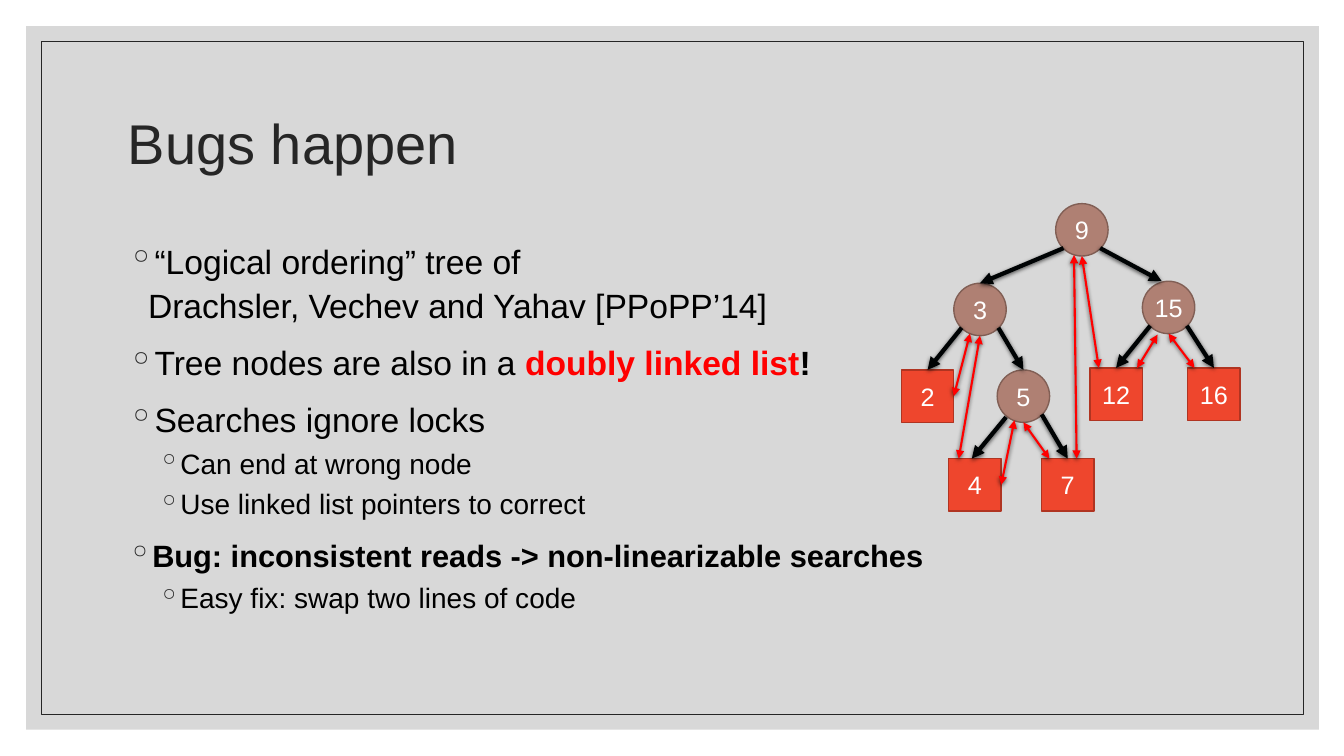
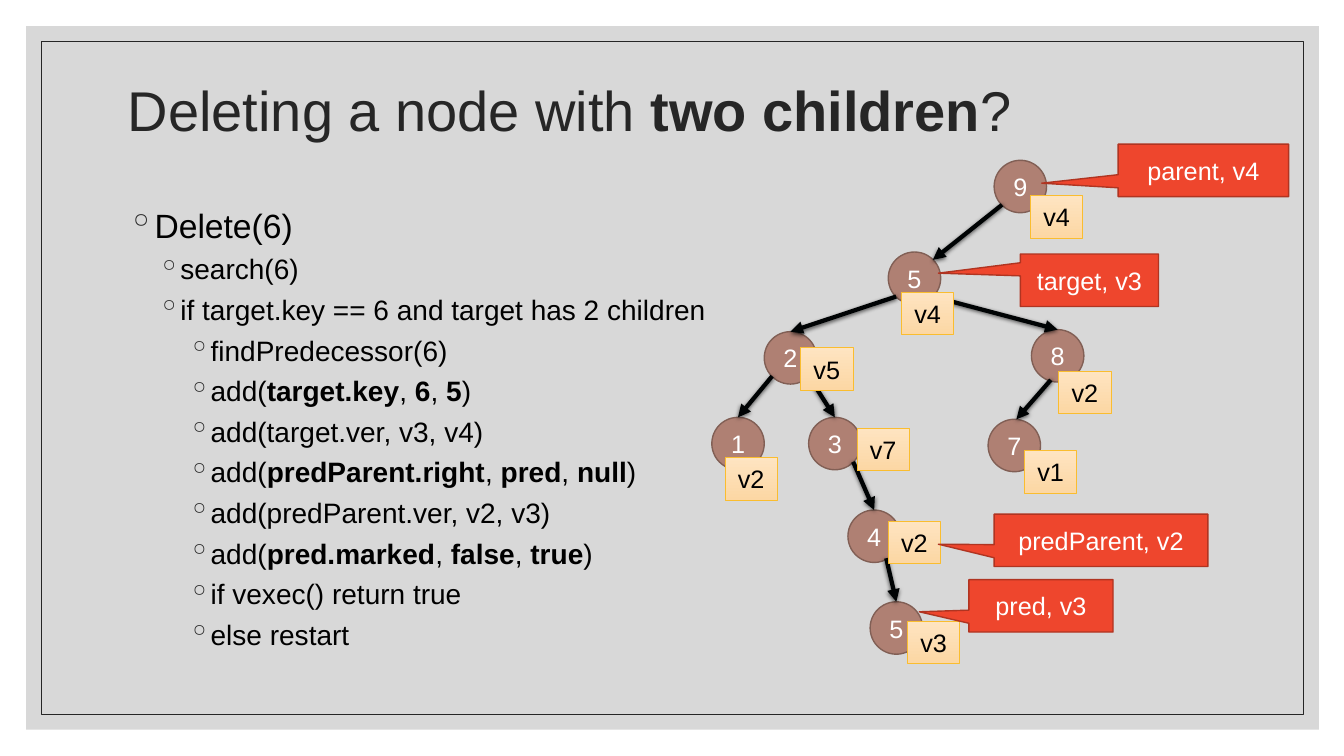
import pptx
import pptx.dml.color
import pptx.enum.dml
import pptx.enum.shapes
import pptx.enum.text
import pptx.oxml
import pptx.oxml.ns
import pptx.util

Inches, Pt = pptx.util.Inches, pptx.util.Pt
RGB = pptx.dml.color.RGBColor
SHAPE = pptx.enum.shapes.MSO_SHAPE
ANCHOR = pptx.enum.text.MSO_ANCHOR

FONT = "Arial"
BLACK, WHITE, RED = RGB(0, 0, 0), RGB(255, 255, 255), RGB(255, 0, 0)
INK, PANEL = RGB(0x26, 0x26, 0x26), RGB(0xBF, 0xBF, 0xBF)
EDGE = RGB(0x00, 0x03, 0x04)
BROWN, BROWN_LINE = RGB(0xAF, 0x80, 0x73), RGB(0x81, 0x5F, 0x55)
ORANGE, ORANGE_LINE = RGB(0xEE, 0x46, 0x2D), RGB(0xB0, 0x34, 0x21)
SAND = (RGB(0xFE, 0xE4, 0xC1), RGB(0xFC, 0xD7, 0xA4))
SAND_LINE = RGB(0xFA, 0xBD, 0x2F)

W, H = 13.33, 7.5
NODE, TAG_H = 0.52, 0.42

# Points on a node, as shares of its width and height
TOP, RIGHT, BOTTOM, LEFT = (0.5, 0), (1, 0.5), (0.5, 1), (0, 0.5)
BL, BR, TR = (0.15, 0.85), (0.85, 0.85), (0.85, 0.15)
SIDES = {TOP: 0, LEFT: 1, BOTTOM: 2, RIGHT: 3}

# Level: text size, line spacing, space before, indent
LEVELS = [(24, 1.1, 9, 0.2), (20, 1.0, 5, 0.5), (20, 1.0, 5, 0.8)]
HIGHLIGHT = "doubly linked list"

# Text: *bold*; body rows are (level, text[, size])
# Nodes: name -> (label, left, top); edges and links: (from, point, to, point)
SLIDES = [
    dict(
        title="Bugs happen", title_box=(1.17, 0.7, 11, 1.5),
        body_box=(1.17, 2.3, 11, 4.21),
        body=[
            (0, "“Logical ordering” tree of\nDrachsler, Vechev and Yahav [PPoPP’14]"),
            (0, "Tree nodes are also in a *doubly linked list**!*"),
            (0, "Searches ignore locks"),
            (1, "Can end at wrong node"),
            (1, "Use linked list pointers to correct"),
            (0, "*Bug: inconsistent reads -> non-linearizable searches*", 22),
            (1, "Easy fix: swap two lines of code"),
        ],
        circles={"9": ("9", 10.47, 2.02), "3": ("3", 9.46, 2.81),
                 "5": ("5", 9.89, 3.67), "15": ("15", 11.33, 2.79)},
        leaves={"2": ("2", 8.94, 3.67), "4": ("4", 9.41, 4.55),
                "7": ("7", 10.33, 4.55), "12": ("12", 10.81, 3.65),
                "16": ("16", 11.78, 3.65)},
        edges=[("9", BL, "3", TOP), ("9", BR, "15", (0.37, 0)),
               ("3", BL, "2", TOP), ("3", BR, "5", TOP),
               ("5", (0.17, 0.9), "4", (0.44, 0)), ("5", BR, "7", TOP),
               ("15", BL, "12", TOP), ("15", BR, "16", TOP)],
        links=[("2", RIGHT, "3", (0.31, 0.96)), ("4", (0.19, 0), "3", BOTTOM),
               ("4", RIGHT, "5", (0.33, 0.96)), ("7", (0.15, 0), "5", BOTTOM),
               ("7", (0.67, 0), "9", (0.35, 0.98)), ("12", (0.17, 0), "9", BOTTOM),
               ("12", (0.9, 0), "15", (0.29, 1.02)), ("16", (0.13, 0), "15", BOTTOM)],
        tags=[], callouts=[],
    ),
    dict(
        title="Deleting a node with *two children*?", title_box=(1.17, 0.58, 11, 1.09),
        body_box=(1.17, 1.94, 6.16, 4.98),
        body=[
            (0, "Delete(6)"),
            (1, "search(6)"),
            (1, "if target.key == 6 and target has 2 children"),
            (2, "findPredecessor(6)"),
            (2, "add(*target.key*, *6*, *5*)"),
            (2, "add(target.ver, v3, v4)"),
            (2, "add(*predParent.right*, *pred*, *null*)"),
            (2, "add(predParent.ver, v2, v3)"),
            (2, "add(*pred.marked*, *false*, *true*)"),
            (2, "if vexec() return true"),
            (2, "else restart"),
        ],
        circles={"9": ("9", 9.86, 1.59), "target": ("5", 8.81, 2.5),
                 "2": ("2", 7.58, 3.29), "8": ("8", 10.23, 3.27),
                 "1": ("1", 7.06, 4.14), "3": ("3", 8.02, 4.14),
                 "7": ("7", 9.8, 4.16), "4": ("4", 8.41, 5.06),
                 "pred": ("5", 8.63, 5.97)},
        leaves={},
        edges=[("9", BL, "target", TR), ("target", BL, "2", TOP),
               ("target", BR, "8", TOP), ("2", BL, "1", TOP), ("2", BR, "3", TOP),
               ("8", (0.37, 0.96), "7", (0.54, 0)), ("3", BR, "4", TOP),
               ("4", (0.73, 0.92), "pred", TOP)],
        links=[],
        tags=[("v4", 10.22, 1.94), ("v4", 8.94, 2.9), ("v5", 7.94, 3.45),
              ("v2", 10.5, 3.68), ("v2", 7.19, 4.54), ("v7", 8.5, 4.25),
              ("v1", 10.16, 4.47), ("v2", 8.81, 5.17), ("v3", 9, 6.16)],
        # text, left, top, width, tip as shares from the centre
        callouts=[("parent, v4", 11.09, 1.43, 1.69, (-0.949, 0.245)),
                  ("target, v3", 10.12, 2.52, 1.37, (-1.093, -0.135)),
                  ("predParent, v2", 9.86, 5.1, 2.12, (-0.761, 0.075)),
                  ("pred, v3", 9.61, 5.75, 1.43, (-0.844, 0.114))],
    ),
]


def add_xml(parent, xml):
    head, sep, rest = xml.partition(">")
    ns = " " + pptx.oxml.ns.nsdecls("a")
    head = head[:-1] + ns + "/" if head.endswith("/") else head + ns
    parent.append(pptx.oxml.parse_xml(head + sep + rest))


def add_box(s, kind, box, fill=None, line=None, width=1, text="", color=WHITE):
    sp = s.shapes.add_shape(kind, *map(Inches, box))
    sp.shadow.inherit = False
    if isinstance(fill, tuple) and not isinstance(fill, RGB):
        sp.fill.gradient()
        sp.fill.gradient_angle = 270
        for stop, stop_color in zip(sp.fill.gradient_stops, fill):
            stop.color.rgb = stop_color
    elif fill is not None:
        sp.fill.solid()
        sp.fill.fore_color.rgb = fill
    else:
        sp.fill.background()
    if line is not None:
        sp.line.color.rgb = line
        sp.line.width = Pt(width)
    else:
        sp.line.fill.background()
    if text:
        tf = sp.text_frame
        tf.text = text
        tf.word_wrap = False
        tf.vertical_anchor = ANCHOR.MIDDLE
        tf.margin_left = tf.margin_right = tf.margin_top = tf.margin_bottom = 0
        p = tf.paragraphs[0]
        p.alignment = pptx.enum.text.PP_ALIGN.CENTER
        style(p.runs[0], 18, color)
    return sp


def style(r, size, color, bold=False):
    r.font.name, r.font.size, r.font.bold = FONT, Pt(size), bold
    r.font.color.rgb = color


def add_rich(p, text, size, color):
    for i, part in enumerate(text.split("*")):
        for j, piece in enumerate(part.split("\n")):
            if j:
                p.add_line_break()
            if piece:
                r = p.add_run()
                r.text = piece
                style(r, size, RED if piece == HIGHLIGHT else color, i % 2 == 1)


def add_text_frame(s, box):
    tf = s.shapes.add_textbox(*map(Inches, box)).text_frame
    tf.word_wrap = True
    return tf


def add_frame(s):
    panel = add_box(s, SHAPE.RECTANGLE, (0.26, 0.26, W - 0.51, H - 0.52), PANEL)
    clr = panel.fill._xPr.find(".//" + pptx.oxml.ns.qn("a:srgbClr"))
    add_xml(clr, '<a:alpha val="60000"/>')
    add_box(s, SHAPE.RECTANGLE, (0.41, 0.41, W - 0.81, H - 0.82), line=INK, width=0.5)


def add_title(s, box, text):
    tf = add_text_frame(s, box)
    tf.vertical_anchor = ANCHOR.MIDDLE
    p = tf.paragraphs[0]
    p.line_spacing = 0.9
    add_rich(p, text, 40, INK)


def add_body(s, box, rows):
    tf = add_text_frame(s, box)
    for i, (level, text, *own_size) in enumerate(rows):
        p = tf.add_paragraph() if i else tf.paragraphs[0]
        size, spacing, before, indent = LEVELS[level]
        p.level, p.line_spacing, p.space_before = level, spacing, Pt(before)
        pPr = p._p.get_or_add_pPr()
        pPr.set("marL", str(Inches(indent)))
        pPr.set("indent", str(Inches(-0.2)))
        add_xml(pPr, f'<a:buClr><a:srgbClr val="{INK}"/></a:buClr>')
        add_xml(pPr, '<a:buChar char="◦"/>')
        add_rich(p, text, own_size[0] if own_size else size, BLACK)


def add_arrow(s, nodes, edge, color, width, ends):
    start, start_at, end, end_at = edge
    (x1, y1), (x2, y2) = (
        (nodes[name].left + int(nodes[name].width * at[0]),
         nodes[name].top + int(nodes[name].height * at[1]))
        for name, at in ((start, start_at), (end, end_at)))
    cx = s.shapes.add_connector(pptx.enum.shapes.MSO_CONNECTOR.STRAIGHT, x1, y1, x2, y2)
    for name, at, join in ((start, start_at, cx.begin_connect), (end, end_at, cx.end_connect)):
        if nodes[name].auto_shape_type == SHAPE.RECTANGLE and at in SIDES:
            join(nodes[name], SIDES[at])
    cx.line.color.rgb = color
    cx.line.width = Pt(width)
    ln = cx.line._get_or_add_ln()
    for tag in ends:
        add_xml(ln, f'<a:{tag} type="triangle"/>')
    add_xml(cx._element.spPr,
            '<a:effectLst><a:outerShdw blurRad="38100" dist="12700" dir="5400000" '
            'rotWithShape="0"><a:srgbClr val="000000"><a:alpha val="63000"/>'
            '</a:srgbClr></a:outerShdw></a:effectLst>')


def add_tree(s, data):
    nodes = {}
    for group, kind, fill, line in (
            ("circles", SHAPE.OVAL, BROWN, BROWN_LINE),
            ("leaves", SHAPE.RECTANGLE, ORANGE, ORANGE_LINE)):
        for name, (label, x, y) in data[group].items():
            nodes[name] = add_box(s, kind, (x, y, NODE, NODE), fill, line, text=label)
    for edge in data["edges"]:
        add_arrow(s, nodes, edge, EDGE, 3, ["tailEnd"])
    for link in data["links"]:
        add_arrow(s, nodes, link, RED, 1.5, ["headEnd", "tailEnd"])
    for text, x, y in data["tags"]:
        add_box(s, SHAPE.RECTANGLE, (x, y, NODE, TAG_H), SAND, SAND_LINE, 0.5, text, BLACK)
    for text, x, y, w, tip in data["callouts"]:
        sp = add_box(s, SHAPE.RECTANGULAR_CALLOUT, (x, y, w, NODE), ORANGE, ORANGE_LINE,
                     text=text)
        sp.adjustments[0], sp.adjustments[1] = tip


def main():
    prs = pptx.Presentation()
    prs.slide_width, prs.slide_height = Inches(W), Inches(H)
    for data in SLIDES:
        s = prs.slides.add_slide(prs.slide_layouts[6])
        add_frame(s)
        add_title(s, data["title_box"], data["title"])
        add_body(s, data["body_box"], data["body"])
        add_tree(s, data)
    prs.save("out.pptx")


if __name__ == "__main__":
    main()
